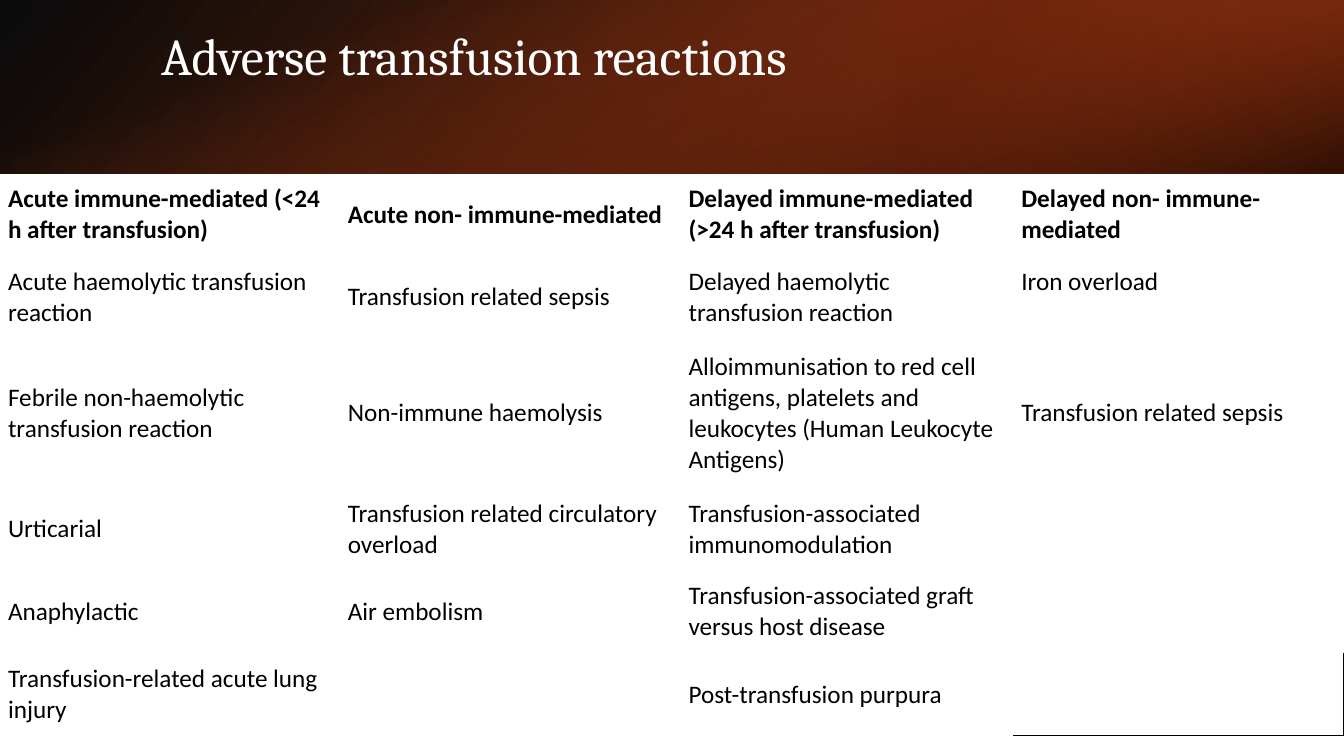
from lxml import etree
from pptx import Presentation
from pptx.dml.color import RGBColor
from pptx.enum.shapes import MSO_SHAPE
from pptx.enum.text import MSO_ANCHOR
from pptx.oxml import parse_xml
from pptx.oxml.ns import nsdecls, qn
from pptx.util import Inches, Pt

RECTANGLE = MSO_SHAPE.RECTANGLE
MIDDLE = MSO_ANCHOR.MIDDLE
WIDTH, HEIGHT = 13.33, 7.5
BAND_HEIGHT = 1.72
LINE_HEIGHT = 0.31
NO_STYLE = "{2D5ABB26-0587-4C30-8999-92F81FD0307C}"
COLORS = {
    "black": "000000",
    "white": "FFFFFF",
    "rust": "9E3611",
    "maroon": "69240C",
    "orange": "D34817",
}
COLUMN_WIDTHS = [3.37, 3.38, 3.3, 3.28]
ROW_HEIGHTS = [0.82, 0.82, 1.48, 0.82, 0.82, 0.82]
REACTIONS = [
    ["Acute immune-mediated (<24 h after transfusion)", "Acute non- immune-mediated",
     "Delayed immune-mediated (>24 h after transfusion)", "Delayed non- immune-mediated"],
    ["Acute haemolytic transfusion reaction", "Transfusion related sepsis",
     "Delayed haemolytic transfusion reaction", "Iron overload"],
    ["Febrile non-haemolytic transfusion reaction", "Non-immune haemolysis",
     "Alloimmunisation to red cell antigens, platelets and leukocytes (Human Leukocyte Antigens)",
     "Transfusion related sepsis"],
    ["Urticarial", "Transfusion related circulatory overload",
     "Transfusion-associated immunomodulation", ""],
    ["Anaphylactic", "Air embolism", "Transfusion-associated graft versus host disease", ""],
    ["Transfusion-related acute lung injury", "", "Post-transfusion purpura", ""],
]


def style_font(font, name, size, color, bold=False):
    """Set the face, size, colour and weight of a font."""
    font.name, font.size, font.bold = name, Pt(size), bold
    font.color.rgb = RGBColor.from_string(COLORS[color])


def add_gradient(slide, box, stops, angle, rotation=0, flipped=False):
    """Add a rectangle with a gradient of (position, colour, opacity) stops."""
    panel = slide.shapes.add_shape(RECTANGLE, *map(Inches, box))
    panel.shadow.inherit = False
    panel.line.fill.background()
    panel.rotation = rotation
    properties = panel._element.spPr
    if flipped:
        properties.find(qn("a:xfrm")).set("flipH", "1")
    stop_xml = "".join(
        f'<a:gs pos="{position * 1000}"><a:srgbClr val="{COLORS[color]}">'
        f'<a:alpha val="{opacity * 1000}"/></a:srgbClr></a:gs>'
        for position, color, opacity in stops)
    gradient = parse_xml(
        f'<a:gradFill {nsdecls("a")} rotWithShape="1"><a:gsLst>{stop_xml}</a:gsLst>'
        f'<a:lin ang="{angle * 60000}" scaled="0"/></a:gradFill>')
    properties.find(qn("a:prstGeom")).addnext(gradient)


def add_title_band(slide, left, top, width, height):
    """Layer the gradients of the band and set the title on them."""
    add_gradient(slide, (left, top, width, height),
                 [(0, "black", 96), (100, "rust", 100)], 140, flipped=True)
    add_gradient(slide, (left + width * 2 / 3, top, width / 3, height),
                 [(19, "maroon", 68), (100, "orange", 79)], 320, 180, True)
    offset = (width - height) / 2
    add_gradient(slide, (left + offset, top - offset, height, width),
                 [(23, "orange", 0), (99, "black", 74)], 340, 90)
    title = slide.shapes.add_textbox(
        Inches(left + 1.5), Inches(top + 0.1), Inches(10.98), Inches(0.96))
    frame = title.text_frame
    frame.word_wrap, frame.vertical_anchor = True, MIDDLE
    heading = frame.paragraphs[0]
    heading.text, heading.line_spacing = "Adverse transfusion reactions", 0.9
    style_font(heading.font, "Cambria", 37, "white")


def add_border(cell, side):
    """Draw a black line on one side of a cell."""
    line = etree.Element(qn(f"a:{side}"), w="12700")
    fill = etree.SubElement(line, qn("a:solidFill"))
    etree.SubElement(fill, qn("a:srgbClr"), val=COLORS["black"])
    cell._tc.get_or_add_tcPr().insert(0, line)


def add_reactions_table(slide, left, top, width, height):
    """Add the table of reactions by onset and mechanism."""
    frame = slide.shapes.add_table(
        len(ROW_HEIGHTS), len(COLUMN_WIDTHS), *map(Inches, (left, top, width, height)))
    table = frame.table
    table.first_row = table.horz_banding = False
    table._tbl.tblPr.find(qn("a:tableStyleId")).text = NO_STYLE
    for column, column_width in zip(table.columns, COLUMN_WIDTHS):
        column.width = Inches(column_width)
    for row, row_height in zip(table.rows, ROW_HEIGHTS):
        row.height = Inches(row_height)
    for row_index, reactions in enumerate(REACTIONS):
        for column_index, reaction in enumerate(reactions):
            cell = table.cell(row_index, column_index)
            cell.fill.background()
            cell.vertical_anchor = MIDDLE
            cell.margin_left = cell.margin_right = Inches(0.08)
            cell.margin_top = cell.margin_bottom = Inches(0.04)
            cell.text = reaction
            style_font(cell.text_frame.paragraphs[0].font, "Calibri", 18, "black",
                       row_index == 0)
    iron_overload = table.cell(1, 3)
    iron_overload.margin_bottom = Inches(0.04 + LINE_HEIGHT)
    last_cell = table.cell(len(ROW_HEIGHTS) - 1, len(COLUMN_WIDTHS) - 1)
    for side in ("lnB", "lnR"):
        add_border(last_cell, side)


def main():
    """Build the slide and save it."""
    deck = Presentation()
    deck.slide_width, deck.slide_height = Inches(WIDTH), Inches(HEIGHT)
    slide = deck.slides.add_slide(deck.slide_layouts[6])
    add_title_band(slide, 0, 0, WIDTH, BAND_HEIGHT)
    add_reactions_table(slide, 0, BAND_HEIGHT, WIDTH, sum(ROW_HEIGHTS))
    deck.save("out.pptx")


if __name__ == "__main__":
    main()
